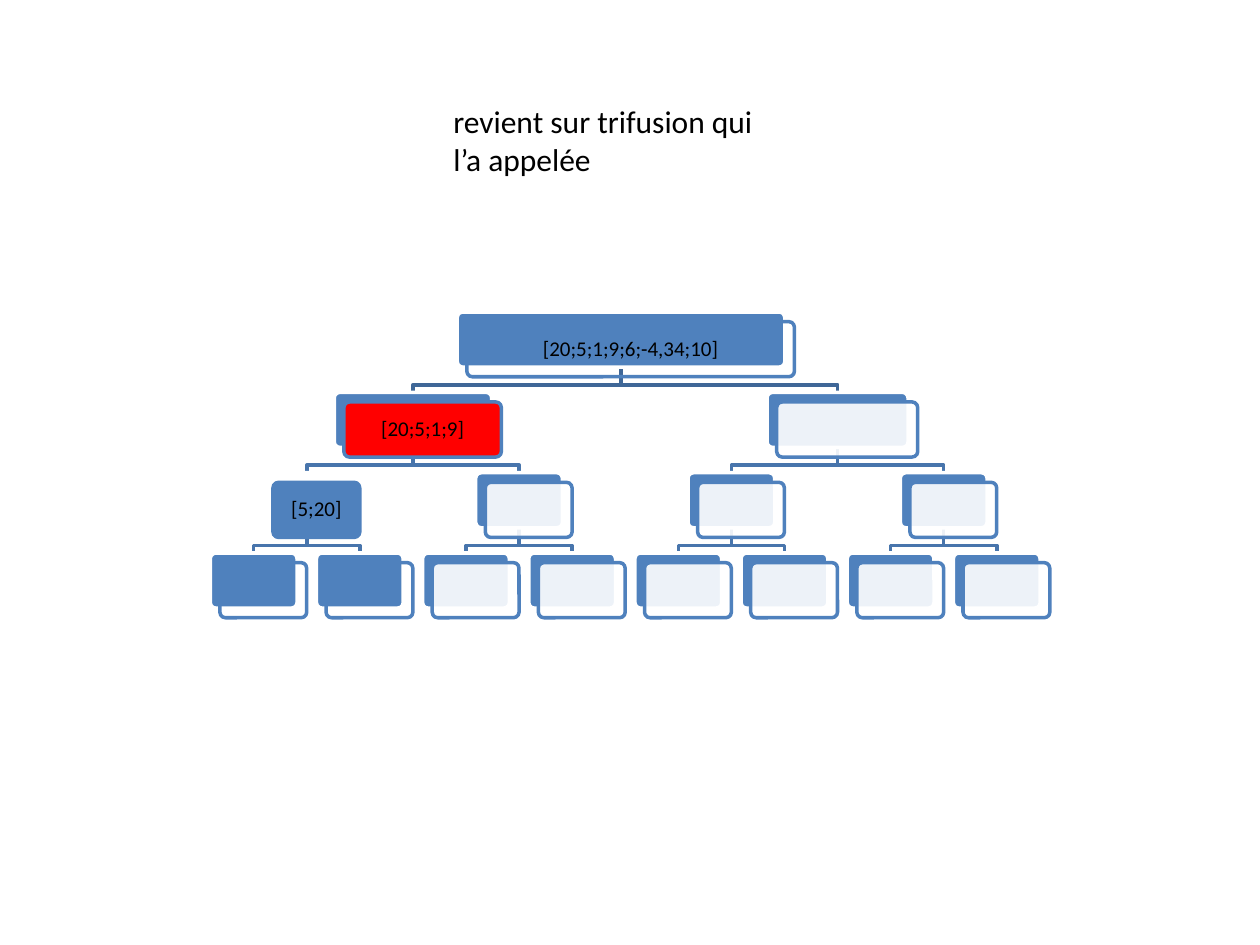
from lxml import etree
from pptx import Presentation
from pptx.dml.color import RGBColor
from pptx.enum import shapes as sh, text as tx
from pptx.oxml.ns import qn
from pptx.util import Pt

HUES = {"blue": "4F81BD", "white": "FFFFFF", "red": "FF0000",
        "black": "000000", "top": "3F6797", "low": "4875AC"}
FONT = "Calibri"
HIGH = 31.5   # card height
SHIFT = 5.5   # offset of the front card from the back card
BEND = 10.1   # drop from a parent to the bend of its links

# Rows from the root down: (width, back fill, front fill, label)
VEIL = ("blue", "veil", "")
ROWS = [
    [(187.2, "blue", None, "[20;5;1;9;6;-4,34;10]")],
    [(90, "blue", "red", "[20;5;1;9]"), (80.6, *VEIL)],
    [(49.6, None, "blue", "[5;20]")] + [(49.6, *VEIL)] * 3,
    [(49.6, "blue", None, "")] * 2 + [(49.6, *VEIL)] * 6,
]


def hue(name):
    return RGBColor.from_string(HUES[name])


def write(frame, words, size=12, align=tx.PP_ALIGN.CENTER, ratio=0.9,
          anchor=tx.MSO_ANCHOR.MIDDLE, pad=(3.6, 3.6)):
    frame.word_wrap = True
    frame.vertical_anchor = anchor
    frame.margin_left = frame.margin_right = Pt(pad[0])
    frame.margin_top = frame.margin_bottom = Pt(pad[1])
    par = frame.paragraphs[0]
    par.alignment, par.line_spacing = align, ratio
    run = par.add_run()
    run.text = words
    run.font.name, run.font.size = FONT, Pt(size)
    run.font.color.rgb = hue("black")


def card(slide, x, y, w, fill, edge):
    box = slide.shapes.add_shape(sh.MSO_SHAPE.ROUNDED_RECTANGLE,
                                 Pt(x), Pt(y), Pt(w), Pt(HIGH))
    box.adjustments[0] = 0.1
    box.shadow.inherit = False
    box.line.color.rgb, box.line.width = hue(edge), Pt(2)
    if fill is None:
        box.fill.background()
    else:
        box.fill.solid()
        box.fill.fore_color.rgb = hue("white" if fill == "veil" else fill)
    if fill == "veil":
        tone = box.fill._xPr.find(".//" + qn("a:srgbClr"))
        etree.SubElement(tone, qn("a:alpha")).set("val", "90000")
    return box


def node(slide, mid, y, w, back, front, label):
    x = mid - w / 2
    card(slide, x, y, w, back, "white")
    face = card(slide, x + SHIFT, y + SHIFT, w, front, "blue")
    if label:
        write(face.text_frame, label)


def link(slide, x, y, to, end, tint):
    pen = slide.shapes.build_freeform(Pt(x), Pt(y))
    pen.add_line_segments([(Pt(x), Pt(y + BEND)), (Pt(to), Pt(y + BEND)),
                           (Pt(to), Pt(end))], close=False)
    path = pen.convert_to_shape()
    path.shadow.inherit = False
    path.fill.background()
    path.line.color.rgb, path.line.width = hue(tint), Pt(2)


def tree(slide, left, top, step, drop):
    """Leaves stand a step apart; each parent is centred over its leaves."""
    def mid(row, col):
        span = 2 ** (len(ROWS) - 1 - row)
        x = left + 24.8 + step * (span * col + (span - 1) / 2)
        return x - 2.4 if row == 0 else x

    # Links lie behind all cards
    for row in range(1, len(ROWS)):
        y = top + drop * row
        for col in range(len(ROWS[row])):
            link(slide, mid(row - 1, col // 2), y - drop + HIGH,
                 mid(row, col), y, "top" if row == 1 else "low")
    # Cards
    for row, cards in enumerate(ROWS):
        for col, parts in enumerate(cards):
            node(slide, mid(row, col), top + drop * row, *parts)


def note(slide, x, y, w, h):
    box = slide.shapes.add_textbox(Pt(x), Pt(y), Pt(w), Pt(h))
    write(box.text_frame, "revient sur trifusion qui l’a appelée", size=18,
          align=tx.PP_ALIGN.LEFT, ratio=1.0, anchor=tx.MSO_ANCHOR.TOP,
          pad=(7.2, 3.6))
    box.text_frame.auto_size = tx.MSO_AUTO_SIZE.SHAPE_TO_FIT_TEXT


def main():
    deck = Presentation()
    deck.slide_width, deck.slide_height = Pt(720), Pt(540)
    slide = deck.slides.add_slide(deck.slide_layouts[6])
    tree(slide, 120.2, 178.3, 60.66, 45.9)
    note(slide, 252, 54.8, 193, 51)
    deck.save("out.pptx")


if __name__ == "__main__":
    main()
